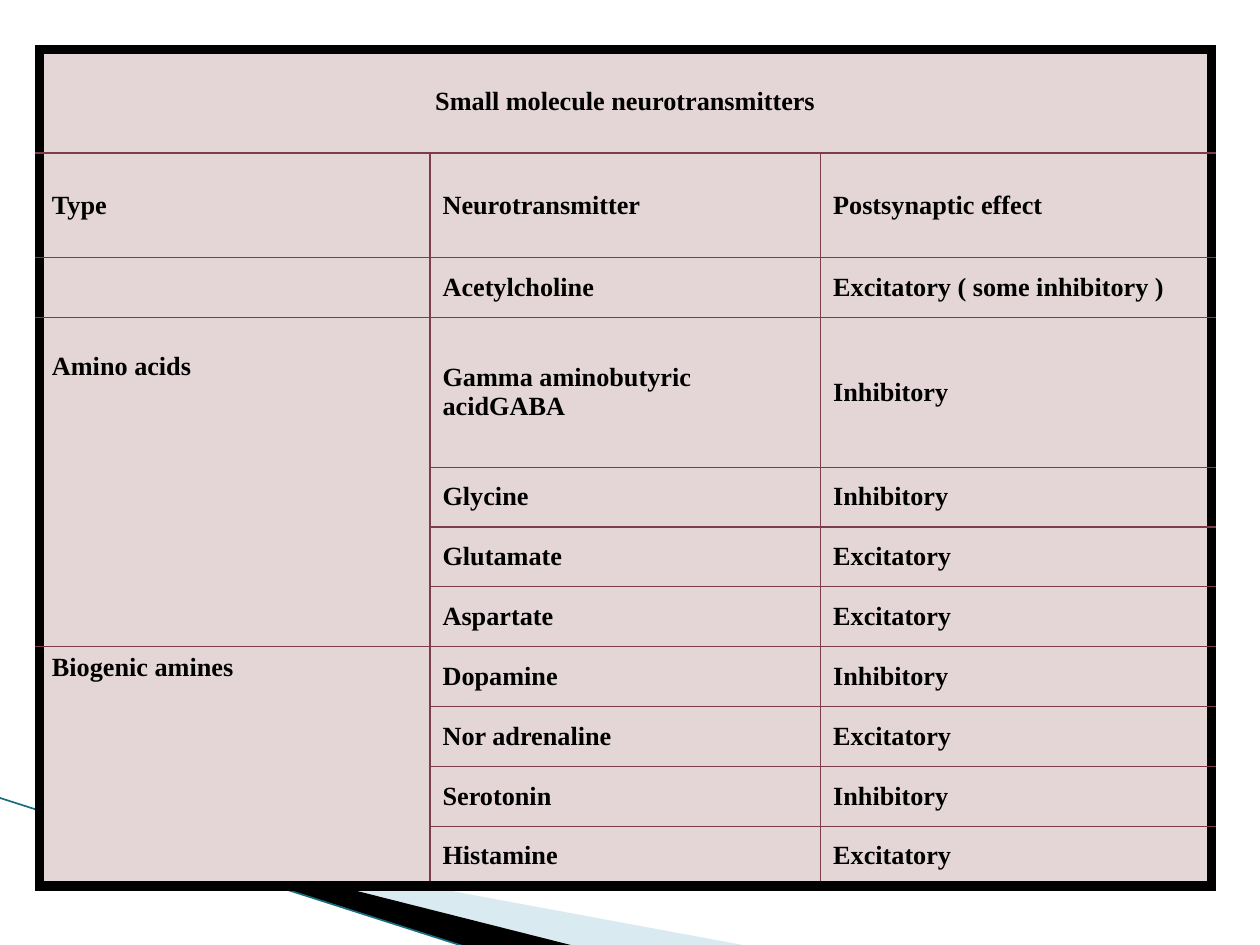
from lxml import etree
from pptx import Presentation, util as u
from pptx.dml.color import RGBColor
from pptx.enum import shapes, text
from pptx.oxml.ns import qn

COLORS = {
    "ink": "000000",
    "cell": "E4D6D7",
    "rule": "7D3C4A",
    "pale": "A0CBDC",
    "teal": "1A6C82",
}
FONT = "Times New Roman"

TITLE = "Small molecule neurotransmitters"
HEADINGS = ("Type", "Neurotransmitter", "Postsynaptic effect")
GROUPS = [
    ("", [("Acetylcholine", "Excitatory ( some inhibitory )")]),
    ("Amino acids", [
        ("Gamma aminobutyric acidGABA", "Inhibitory"),
        ("Glycine", "Inhibitory"),
        ("Glutamate", "Excitatory"),
        ("Aspartate", "Excitatory"),
    ]),
    ("Biogenic amines", [
        ("Dopamine", "Inhibitory"),
        ("Nor adrenaline", "Excitatory"),
        ("Serotonin", "Inhibitory"),
        ("Histamine", "Excitatory"),
    ]),
]
LEFT, TOP, COLUMN = 0.3125, 0.394, 3.1
ROW = 0.475
HEIGHTS = [0.82, 0.83, ROW, 1.19] + [ROW] * 7
TOP_MARGINS = {"Amino acids": 0.28}

SWOOSHES = [
    ((0.78, 5.47, 4.16, 1.58),
     [(0.55, 6.51), (5.95, 7.51), (4.56, 7.51), (0.55, 6.5)], "pale", 40),
    ((-0.06, 6.33, 4.16, 0.92),
     [(0.53, 6.49), (4.57, 7.51), (3.72, 7.52), (0.54, 6.5)], "ink", 100),
]


def rgb(name):
    return RGBColor.from_string(COLORS[name])


def set_frame(swoosh, frame):
    left, top, width, height = [u.Inches(length) for length in frame]
    outline = swoosh._element.spPr.find(".//" + qn("a:path"))
    outline.set("w", str(width))
    outline.set("h", str(height))
    for point in outline.iter(qn("a:pt")):
        point.set("x", str(int(point.get("x")) + swoosh.left - left))
        point.set("y", str(int(point.get("y")) + swoosh.top - top))
    swoosh.left, swoosh.top, swoosh.width, swoosh.height = left, top, width, height


def add_swoosh(slide, frame, points, color, opacity):
    corners = [(u.Inches(x), u.Inches(y)) for x, y in points]
    builder = slide.shapes.build_freeform(*corners[0], scale=1.0)
    builder.add_line_segments(corners[1:], close=True)
    swoosh = builder.convert_to_shape()
    set_frame(swoosh, frame)
    swoosh.shadow.inherit = False
    swoosh.line.fill.background()
    swoosh.fill.solid()
    swoosh.fill.fore_color.rgb = rgb(color)
    if opacity < 100:
        tint = swoosh._element.spPr.find(".//" + qn("a:srgbClr"))
        etree.SubElement(tint, qn("a:alpha"), val=str(opacity * 1000))


def add_edge(slide):
    edge = slide.shapes.add_connector(
        shapes.MSO_CONNECTOR.STRAIGHT,
        u.Inches(-0.01), u.Inches(6.33), u.Inches(3.71), u.Inches(7.52))
    edge.line.color.rgb = rgb("teal")
    edge.line.width = u.Pt(0.95)
    etree.SubElement(edge._element.spPr, qn("a:effectLst"))


def write(cell, words, align=text.PP_ALIGN.LEFT,
          anchor=text.MSO_ANCHOR.MIDDLE, top=0.05):
    cell.vertical_anchor = anchor
    cell.margin_top = u.Inches(top)
    paragraph = cell.text_frame.paragraphs[0]
    paragraph.alignment = align
    paragraph.font.size = u.Pt(15)
    if words:
        run = paragraph.add_run()
        run.text = words
        run.font.name = FONT
        run.font.size = u.Pt(15)
        run.font.bold = True
        run.font.color.rgb = rgb("ink")


def add_borders(cell, outer):
    properties = cell._tc.get_or_add_tcPr()
    for side in "LRTB":
        color, width = ("ink", 6) if side in outer else ("rule", 0.75)
        border = etree.SubElement(properties, qn("a:ln" + side), w=str(u.Pt(width)))
        fill = etree.SubElement(border, qn("a:solidFill"))
        etree.SubElement(fill, qn("a:srgbClr"), val=COLORS[color])


def add_neurotransmitters(slide):
    rows, columns = len(HEIGHTS), len(HEADINGS)
    table = slide.shapes.add_table(
        rows, columns, u.Inches(LEFT), u.Inches(TOP),
        u.Inches(COLUMN * columns), u.Inches(sum(HEIGHTS))).table
    table.first_row = table.horz_banding = False
    for column in table.columns:
        column.width = u.Inches(COLUMN)
    for row, height in zip(table.rows, HEIGHTS):
        row.height = u.Inches(height)

    table.cell(0, 0).merge(table.cell(0, columns - 1))
    write(table.cell(0, 0), TITLE, align=text.PP_ALIGN.CENTER)
    for c, heading in enumerate(HEADINGS):
        write(table.cell(1, c), heading)
    r = 2
    for group, members in GROUPS:
        kind = table.cell(r, 0)
        if len(members) > 1:
            kind.merge(table.cell(r + len(members) - 1, 0))
        write(kind, group, anchor=text.MSO_ANCHOR.TOP,
              top=TOP_MARGINS.get(group, 0.05))
        for transmitter, effect in members:
            write(table.cell(r, 1), transmitter)
            write(table.cell(r, 2), effect)
            r += 1

    for r in range(rows):
        for c in range(columns):
            cell = table.cell(r, c)
            spread = cell.span_width if cell.is_merge_origin else 1
            depth = cell.span_height if cell.is_merge_origin else 1
            at_edge = {"L": c == 0, "R": c + spread == columns,
                       "T": r == 0, "B": r + depth == rows}
            add_borders(cell, [side for side, outer in at_edge.items() if outer])
            cell.fill.solid()
            cell.fill.fore_color.rgb = rgb("cell")


def main():
    deck = Presentation()
    deck.slide_width, deck.slide_height = u.Inches(10), u.Inches(7.5)
    slide = deck.slides.add_slide(deck.slide_layouts[6])
    for frame, points, color, opacity in SWOOSHES:
        add_swoosh(slide, frame, points, color, opacity)
    add_edge(slide)
    add_neurotransmitters(slide)
    deck.save("out.pptx")


if __name__ == "__main__":
    main()
